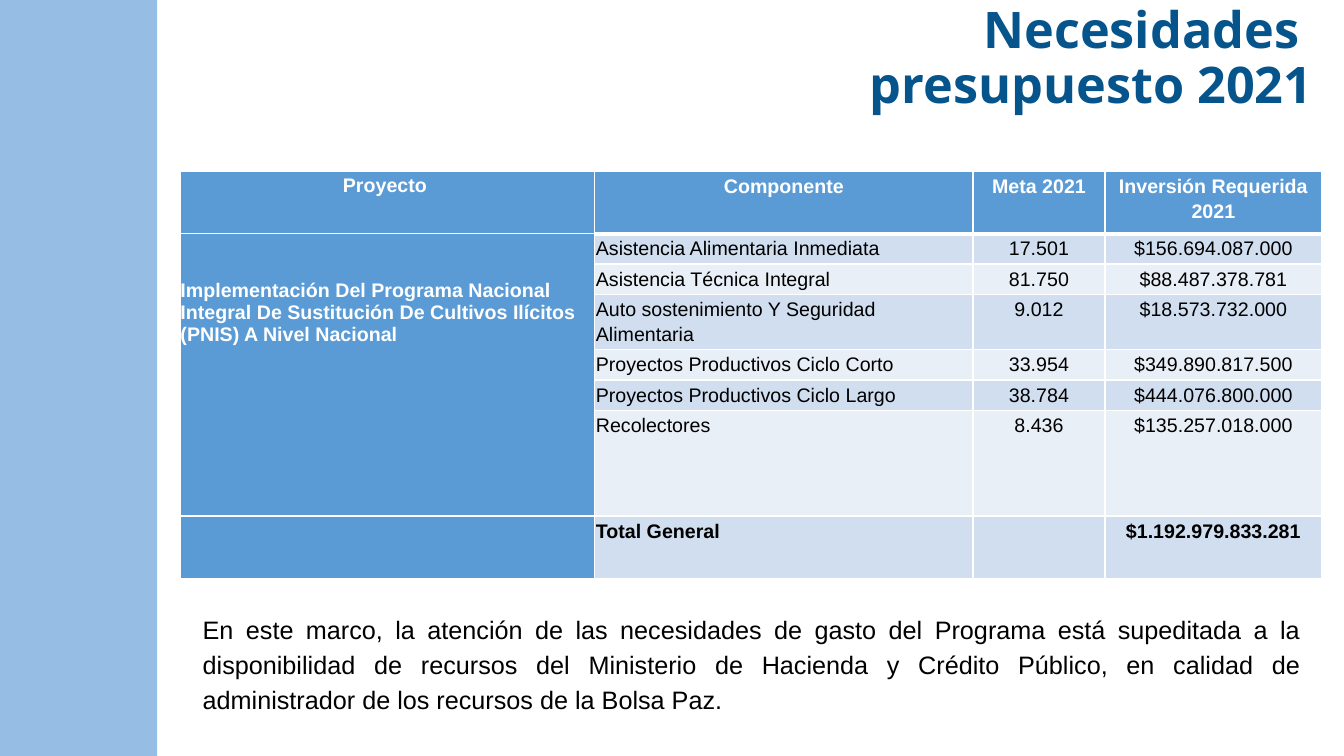
import pptx
import pptx.util
import pptx.dml.color
import pptx.enum.shapes
import pptx.enum.text
import pptx.oxml
import pptx.oxml.ns

Inches, Pt = pptx.util.Inches, pptx.util.Pt
ALIGN = pptx.enum.text.PP_ALIGN
COLORS = {
    "sidebar": "96BDE3", "title": "05548B", "head": "5B9BD5",
    "band_dark": "D0DEEF", "band_light": "E9EFF7",
    "white": "FFFFFF", "text": "000000",
}
HEADERS = ["Proyecto ", "Componente", "Meta 2021", "Inversión Requerida 2021"]
PROJECT = ("Implementación Del Programa Nacional Integral De Sustitución "
           "De Cultivos Ilícitos (PNIS) A Nivel Nacional")
COMPONENTS = [
    ("Asistencia Alimentaria Inmediata", "17.501", "$156.694.087.000"),
    ("Asistencia Técnica Integral", "81.750", "$88.487.378.781"),
    ("Auto sostenimiento Y Seguridad Alimentaria", "9.012", "$18.573.732.000"),
    ("Proyectos Productivos Ciclo Corto", "33.954", "$349.890.817.500"),
    ("Proyectos Productivos Ciclo Largo", "38.784", "$444.076.800.000"),
    ("Recolectores", "8.436", "$135.257.018.000"),
]
TOTAL = ["", "Total General", "", "$1.192.979.833.281"]
COL_WIDTHS = [4.11, 3.75, 1.31, 2.15]
ROW_HEIGHTS = [0.62, 0.3, 0.3, 0.55, 0.3, 0.3, 1.05, 0.62]
NOTE = ("En este marco, la atención de las necesidades de gasto del Programa "
        "está supeditada a la disponibilidad de recursos del Ministerio de "
        "Hacienda y Crédito Público, en calidad de administrador de los "
        "recursos de la Bolsa Paz.")


def rgb(name):
    return pptx.dml.color.RGBColor.from_string(COLORS[name])


def write(p, text, size, color, font="Arial", bold=False, align=ALIGN.LEFT, spacing=1.15):
    p.alignment = align
    p.line_spacing = spacing
    p.space_before = Pt(0)
    r = p.add_run()
    r.text = text
    r.font.name, r.font.size, r.font.bold = font, Pt(size), bold
    r.font.color.rgb = rgb(color)


def set_margins(target, margin):
    """Give a text frame or a table cell the same margin on all sides."""
    target.margin_left = target.margin_right = Inches(margin)
    target.margin_top = target.margin_bottom = Inches(margin)


def set_borders(cell, widths):
    """Draw white borders; widths maps L, R, T, B to points."""
    tcPr = cell._tc.get_or_add_tcPr()
    for i, (side, width) in enumerate(widths.items()):
        tcPr.insert(i, pptx.oxml.parse_xml(
            f'<a:ln{side} {pptx.oxml.ns.nsdecls("a")} w="{Pt(width)}"><a:solidFill>'
            f'<a:srgbClr val="{COLORS["white"]}"/></a:solidFill></a:ln{side}>'))


def add_sidebar(slide, x, y, w, h):
    sp = slide.shapes.add_shape(pptx.enum.shapes.MSO_SHAPE.RECTANGLE,
                                Inches(x), Inches(y), Inches(w), Inches(h))
    sp.shadow.inherit = False
    sp.fill.solid()
    sp.fill.fore_color.rgb = rgb("sidebar")
    sp.line.fill.background()


def add_title(slide, x, y, w, h):
    title = slide.shapes.title
    title.left, title.top, title.width, title.height = map(Inches, (x, y, w, h))
    tf = title.text_frame
    tf.word_wrap = True
    tf.auto_size = pptx.enum.text.MSO_AUTO_SIZE.NONE
    tf.vertical_anchor = pptx.enum.text.MSO_ANCHOR.TOP
    set_margins(tf, 0.05)
    for i, line in enumerate(["Necesidades ", "presupuesto 2021"]):
        p = tf.add_paragraph() if i else tf.paragraphs[0]
        write(p, line, 36, "title", "Open Sans", True, ALIGN.RIGHT, 0.9)


def add_budget_table(slide, x, y):
    rows = [HEADERS] + [["", *component] for component in COMPONENTS] + [TOTAL]
    rows[1][0] = PROJECT
    table = slide.shapes.add_table(
        len(rows), len(HEADERS), Inches(x), Inches(y),
        Inches(sum(COL_WIDTHS)), Inches(sum(ROW_HEIGHTS))).table
    for column, width in zip(table.columns, COL_WIDTHS):
        column.width = Inches(width)
    for row, height in zip(table.rows, ROW_HEIGHTS):
        row.height = Inches(height)
    project = table.cell(1, 0)
    project.merge(table.cell(len(COMPONENTS), 0))

    for r, values in enumerate(rows):
        for c, text in enumerate(values):
            cell = table.cell(r, c)
            is_head = r == 0 or c == 0
            fill = "head" if is_head else "band_dark" if r % 2 else "band_light"
            cell.fill.solid()
            cell.fill.fore_color.rgb = rgb(fill)
            set_margins(cell, 0.01 if c else 0)
            set_borders(cell, {"L": 1, "R": 1, "T": 3 if r == 1 and c else 1,
                               "B": 3 if r == 0 and c else 1})
            if text:
                write(cell.text_frame.paragraphs[0], text, 14,
                      "white" if is_head else "text",
                      bold=is_head or values is TOTAL,
                      align=ALIGN.CENTER if r == 0 or c > 1 else ALIGN.LEFT,
                      spacing=1 if text == PROJECT else 1.15)
    project.margin_top = Inches(0.45)


def add_note(slide, x, y, w, h):
    tf = slide.shapes.add_textbox(Inches(x), Inches(y), Inches(w), Inches(h)).text_frame
    tf.word_wrap = True
    set_margins(tf, 0.05)
    write(tf.paragraphs[0], NOTE, 18, "text", align=ALIGN.JUSTIFY)


def main():
    prs = pptx.Presentation()
    prs.slide_width, prs.slide_height = Inches(13.33), Inches(7.5)
    slide = prs.slides.add_slide(prs.slide_layouts[5])
    add_sidebar(slide, 0, 0, 1.56, 7.5)
    add_title(slide, 5.51, 0, 7.56, 1.29)
    add_budget_table(slide, 1.79, 1.7)
    add_note(slide, 1.96, 6, 10.99, 1.05)
    prs.save("out.pptx")


if __name__ == "__main__":
    main()
